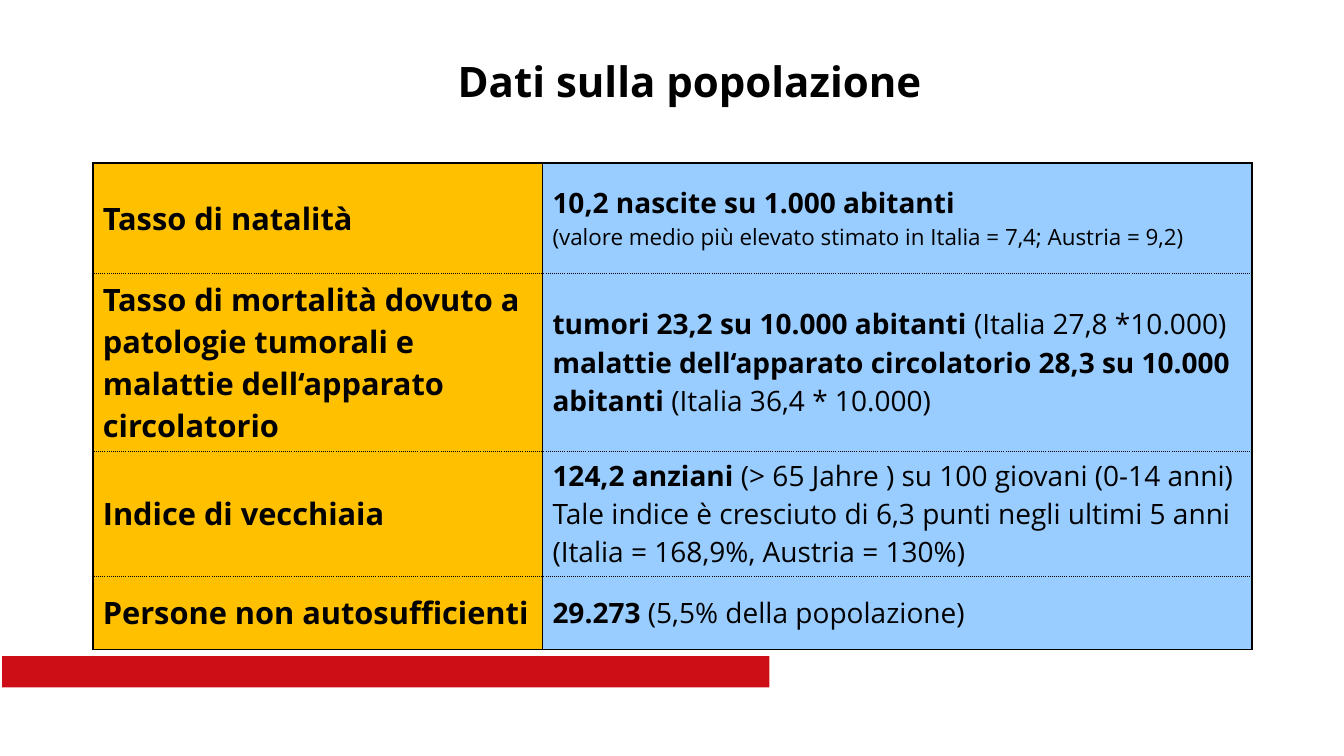
"""Builds the slide with the table of population data."""
from lxml import etree
from pptx import Presentation, util as u
from pptx.dml.color import RGBColor
from pptx.enum import shapes, text
from pptx.oxml.ns import qn

TITLE = "Dati sulla popolazione"
FONT, BLACK, RED = "Open Sans", "000000", "CD0E16"
FILLS = "FFC000", "99CCFF"
COLS = 4.46, 7.04
ROWS = 1.09, 1.4, 1.08, 0.73
LABEL, VALUE, NOTE = 22, 20, 16
DATA = [
    ("Tasso di natalità", [
        [("10,2 nascite su 1.000 abitanti", VALUE, True)],
        [("(valore medio più elevato stimato in Italia = 7,4; Austria = 9,2)", NOTE, False)]]),
    ("Tasso di mortalità dovuto a patologie tumorali e malattie dell‘apparato circolatorio", [
        [("tumori 23,2 su 10.000 abitanti ", VALUE, True),
         ("(Italia 27,8 *10.000)", VALUE, False)],
        [("malattie dell‘apparato circolatorio 28,3 su 10.000 abitanti ", VALUE, True),
         ("(Italia 36,4 * 10.000)", VALUE, False)]]),
    ("Indice di vecchiaia", [
        [("124,2 anziani ", VALUE, True),
         ("(> 65 Jahre ) su 100 giovani (0-14 anni)", VALUE, False)],
        [("Tale indice è cresciuto di 6,3 punti negli ultimi 5 anni "
          "(Italia = 168,9%, Austria = 130%)", VALUE, False)]]),
    ("Persone non autosufficienti", [
        [("29.273", VALUE, True), (" (5,5% della popolazione)", VALUE, False)]]),
]


def rgb(color):
    return RGBColor.from_string(color)


def box(*lengths):
    return [u.Inches(v) for v in lengths]


def write(p, runs):
    for words, size, bold in runs:
        r = p.add_run()
        r.text = words
        for key, value in {"name": FONT, "size": u.Pt(size), "bold": bold}.items():
            setattr(r.font, key, value)
        r.font.color.rgb = rgb(BLACK)


def border(cell, side, width, dash):
    ln = etree.Element(qn(f"a:ln{side}"), w=str(u.Pt(width)))
    fill = etree.SubElement(ln, qn("a:solidFill"))
    etree.SubElement(fill, qn("a:srgbClr"), val=BLACK)
    etree.SubElement(ln, qn("a:prstDash"), val=dash)
    return ln


def format_cell(cell, paragraphs, fill, row):
    cell.vertical_anchor = text.MSO_ANCHOR.MIDDLE
    tf = cell.text_frame
    for i, runs in enumerate(paragraphs):
        write(tf.add_paragraph() if i else tf.paragraphs[0], runs)
    cell.fill.solid()
    cell.fill.fore_color.rgb = rgb(fill)
    solid, dotted = (1.5, "solid"), (0.5, "sysDot")
    top = dotted if row else solid
    bottom = solid if row == len(DATA) - 1 else dotted
    sides = {"L": solid, "R": solid, "T": top, "B": bottom}
    tc_pr = cell._tc.get_or_add_tcPr()
    for i, (side, style) in enumerate(sides.items()):
        tc_pr.insert(i, border(cell, side, *style))


def main():
    prs = Presentation()
    prs.slide_width, prs.slide_height = box(13.33, 7.5)
    s = prs.slides.add_slide(prs.slide_layouts[5])

    bar = s.shapes.add_shape(shapes.MSO_SHAPE.RECTANGLE, *box(0.02, 6.51, 7.61, 0.31))
    bar.shadow.inherit = False
    bar.fill.solid()
    bar.fill.fore_color.rgb = rgb(RED)
    bar.line.fill.background()

    title = s.shapes.title
    title.left, title.top, title.width, title.height = box(0.84, 0.21, 12, 1.18)
    tf = title.text_frame
    tf.vertical_anchor = text.MSO_ANCHOR.MIDDLE
    p = tf.paragraphs[0]
    p.alignment = text.PP_ALIGN.CENTER
    write(p, [(TITLE, 30, True)])

    frame = s.shapes.add_table(len(ROWS), len(COLS), *box(0.92, 1.62, sum(COLS), sum(ROWS)))
    table = frame.table
    table.first_row = table.horz_banding = False
    for column, width in zip(table.columns, COLS):
        column.width = u.Inches(width)
    for i, (height, (label, value)) in enumerate(zip(ROWS, DATA)):
        table.rows[i].height = u.Inches(height)
        for j, paragraphs in enumerate(([[(label, LABEL, True)]], value)):
            format_cell(table.cell(i, j), paragraphs, FILLS[j], i)

    prs.save("out.pptx")


if __name__ == "__main__":
    main()
